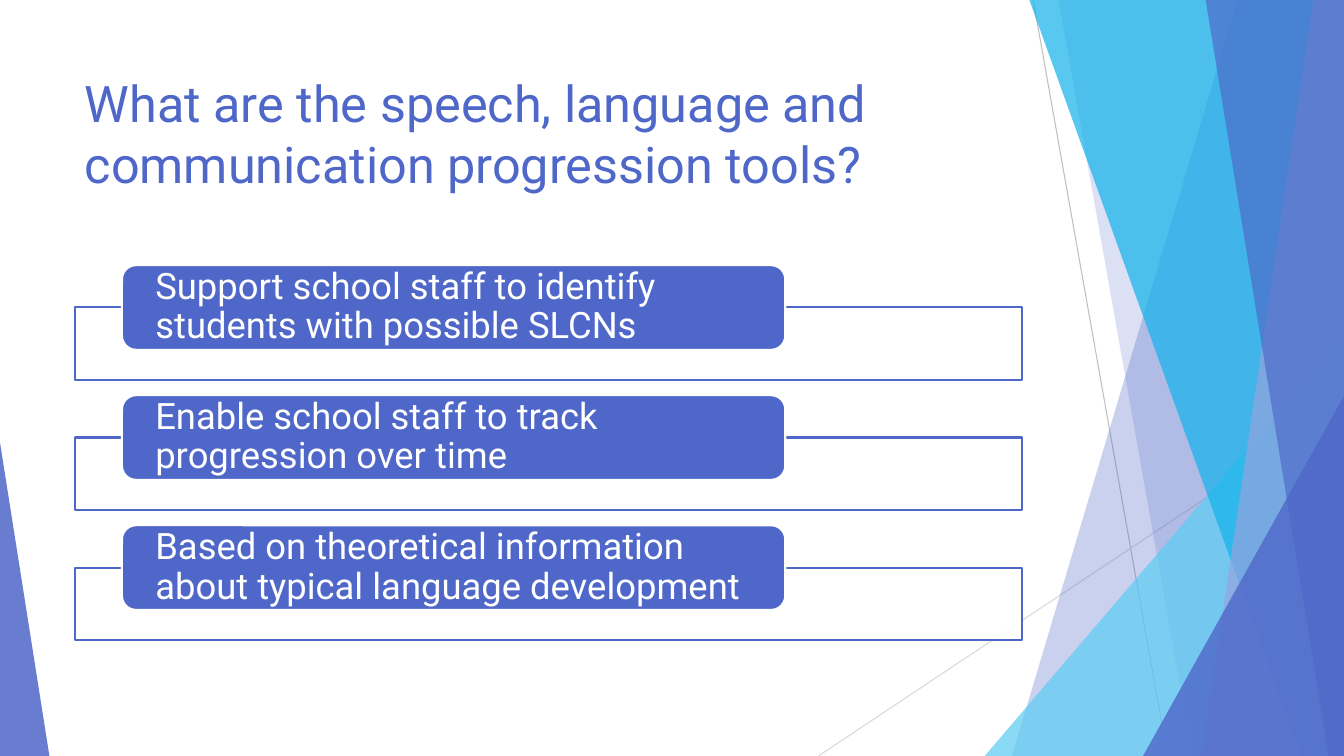
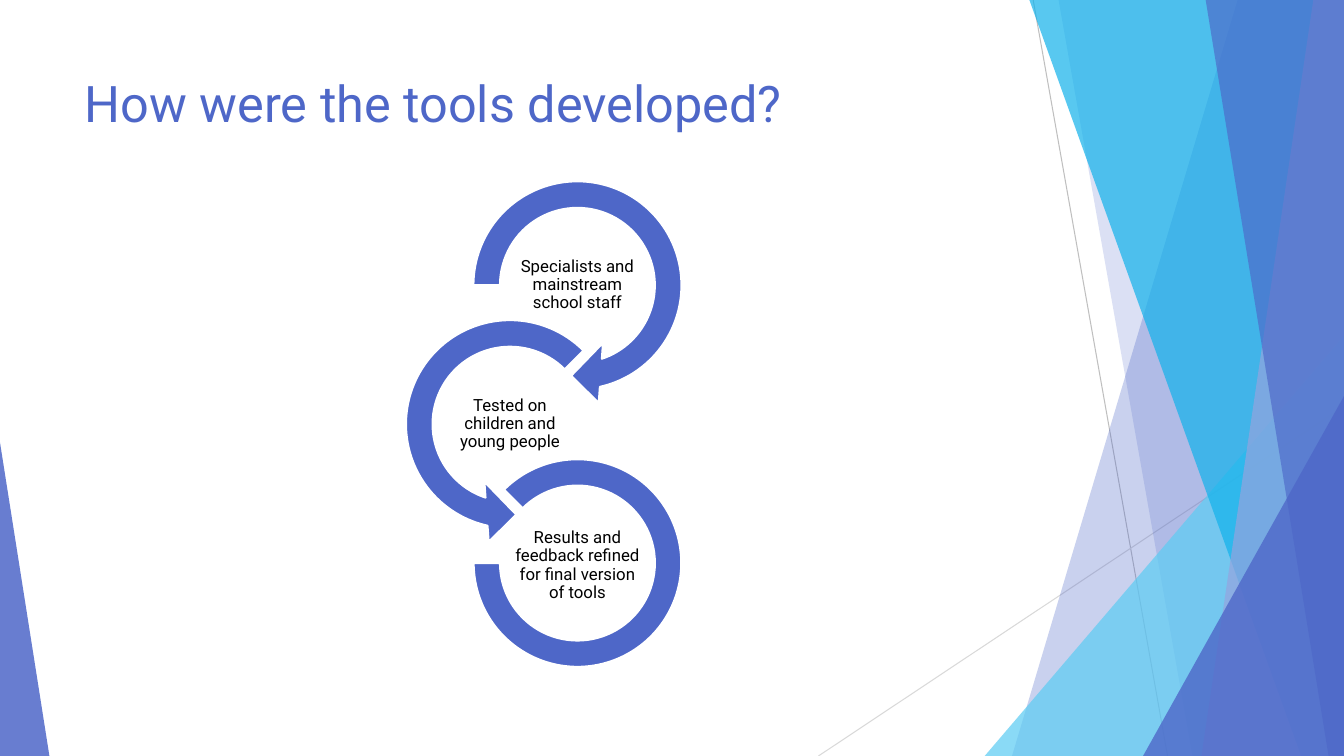
from lxml import etree
from pptx import Presentation
from pptx.dml.color import RGBColor
from pptx.enum.shapes import MSO_CONNECTOR, MSO_SHAPE
from pptx.enum.text import MSO_ANCHOR, MSO_AUTO_SIZE, PP_ALIGN
from pptx.oxml.ns import qn
from pptx.util import Pt

RECTANGLE, ROUNDED = MSO_SHAPE.RECTANGLE, MSO_SHAPE.ROUNDED_RECTANGLE
TRIANGLE, BLOCK_ARC = MSO_SHAPE.ISOSCELES_TRIANGLE, MSO_SHAPE.BLOCK_ARC
RIGHT_TURN, LEFT_TURN = MSO_SHAPE.CIRCULAR_ARROW, MSO_SHAPE.LEFT_CIRCULAR_ARROW
STRAIGHT = MSO_CONNECTOR.STRAIGHT
TOP, MIDDLE = MSO_ANCHOR.TOP, MSO_ANCHOR.MIDDLE
LEFT, CENTER = PP_ALIGN.LEFT, PP_ALIGN.CENTER
NO_AUTOFIT = MSO_AUTO_SIZE.NONE

# Content
TITLES = [
    "What are the speech, language and communication progression tools?",
    "How were the tools developed?",
]
PURPOSES = [
    "Support school staff to identify students with possible SLCNs",
    "Enable school staff to track progression over time",
    "Based on theoretical information about typical language development",
]
# text, shape, diameter, centre x, text shift down, adjustments
STAGES = [
    ("Specialists and mainstream school staff", RIGHT_TURN, 172.8, 412.5, 0,
     (0.11, 11.423, 45, 108, 0.125)),
    ("Tested on children and young people", LEFT_TURN, 172.8, 364.3, 0,
     (0.11, 11.423, 63, 189, 0.125)),
    ("Results and feedback refined for final version of tools", BLOCK_ARC,
     148.3, 412.5, 1.8, (135, 108, 0.127)),
]

# Shared look
WIDTH, HEIGHT = 960, 540
FONT = "Roboto"
COLORS = {
    "blue": "4E67C8", "sky": "5ECCF3", "cyan": "12B2EB", "lavender": "95A4DE",
    "white": "FFFFFF", "black": "000000", "gray": "BFBFBF", "pale": "D9D9D9",
}
TITLE_BOX = (53.3, 48.2, 676.8, 103.7)
TITLE_STYLE = {"size": Pt(36), "color": "blue"}
PURPOSE_STYLE = {"size": Pt(26), "color": "white"}
STAGE_STYLE = {"size": Pt(12), "color": "black"}

# Background: thin lines, then facets from back to front
THIN_LINES = [((738, 0), (834, HEIGHT), "gray"),
              ((WIDTH, 290.2), (584.6, HEIGHT), "pale")]
# band: x at top and bottom; triangle: left, top, width, apex
FACETS = [
    ("band", (884.2, 722.9), "blue", 30),
    ("band", (756, 851.8), "blue", 20),
    ("triangle", (703.4, 239.8, 256.6, 1), "sky", 72),
    ("band", (735.1, 929.5), "cyan", 70),
    ("band", (938.2, 858.2), "lavender", 70),
    ("band", (861.1, 949), "blue", 65),
    ("triangle", (816.5, 283, 143.5, 1), "blue", 80),
    ("triangle", (0, 316.1, 35.3, 0), "blue", 85),
]


def rgb(name):
    return RGBColor.from_string(COLORS[name])


def paint(shape, fill, opacity=100, line=None):
    shape.shadow.inherit = False
    shape.fill.solid()
    shape.fill.fore_color.rgb = rgb(fill)
    if opacity < 100:
        color = shape.element.xpath("./p:spPr/a:solidFill/a:srgbClr")[0]
        etree.SubElement(color, qn("a:alpha"), val=str(opacity * 1000))
    if line:
        shape.line.color.rgb = rgb(line)
        shape.line.width = Pt(1.5)
    else:
        shape.line.fill.background()


def add_shape(page, kind, box, fill, opacity=100, line=None, adjustments=()):
    shape = page.shapes.add_shape(kind, *map(Pt, box))
    for index, value in enumerate(adjustments):
        shape.adjustments[index] = value
    paint(shape, fill, opacity, line)
    return shape


def write(shape, text, style, align=LEFT, anchor=MIDDLE, insets=(0, 0), spacing=0.9):
    frame = shape.text_frame
    side, edge = map(Pt, insets)
    settings = {"word_wrap": True, "auto_size": NO_AUTOFIT, "vertical_anchor": anchor,
                "margin_left": side, "margin_right": side,
                "margin_top": edge, "margin_bottom": edge}
    for name, value in settings.items():
        setattr(frame, name, value)
    para = frame.paragraphs[0]
    para.alignment, para.line_spacing = align, spacing
    span = para.add_run()
    span.text = text
    span.font.name, span.font.size = FONT, style["size"]
    span.font.color.rgb = rgb(style["color"])


def add_band(page, top_x, bottom_x):
    top = Pt(-0.6)
    builder = page.shapes.build_freeform(Pt(top_x), top)
    builder.add_line_segments([(Pt(WIDTH), top), (Pt(WIDTH), Pt(HEIGHT)),
                               (Pt(bottom_x), Pt(HEIGHT))])
    return builder.convert_to_shape()


def decorate(layout, page):
    """Draw the background on a page and move it to the layout."""
    parts = []
    for start, end, color in THIN_LINES:
        line = page.shapes.add_connector(STRAIGHT, *map(Pt, start + end))
        line.line.color.rgb = rgb(color)
        line.line.width = Pt(0.75)
        etree.SubElement(line.element.spPr, qn("a:effectLst"))
        parts.append(line)
    for kind, place, color, opacity in FACETS:
        if kind == "band":
            facet = add_band(page, *place)
            paint(facet, color, opacity)
        else:
            left, top, width, apex = place
            facet = add_shape(page, TRIANGLE, (left, top, width, HEIGHT - top),
                              color, opacity, adjustments=(apex,))
        parts.append(facet)
    for index, part in enumerate(parts):
        part.element.xpath(".//p:cNvPr")[0].set("id", str(100 + index))
        layout.shapes.element.insert(2 + index, part.element)


def add_page(deck, layout, title):
    page = deck.slides.add_slide(layout)
    box = page.shapes.title
    box.left, box.top, box.width, box.height = map(Pt, TITLE_BOX)
    write(box, title, TITLE_STYLE, anchor=TOP, insets=(7.2, 3.6), spacing=1.0)
    return page


def add_purposes(page):
    first_top, step = 219.6, 92.9
    for index, text in enumerate(PURPOSES):
        top = first_top + index * step
        add_shape(page, RECTANGLE, (53.3, top, 676.8, 51.8), "white", 90, "blue")
        label = add_shape(page, ROUNDED, (87.1, top - 30.2, 473.8, 60.5),
                          "blue", line="white")
        write(label, text, PURPOSE_STYLE, insets=(20.9, 0))


def add_stages(page):
    first_middle, step = 203.8, 99.2
    text_width, text_height = 95.8, 48.2
    for index, (text, kind, size, center, shift, adjustments) in enumerate(STAGES):
        middle = first_middle + index * step
        add_shape(page, kind, (center - size / 2, middle - size / 2, size, size),
                  "blue", line="white", adjustments=adjustments)
        box = page.shapes.add_textbox(
            Pt(center - text_width / 2), Pt(middle + shift - text_height / 2),
            Pt(text_width), Pt(text_height))
        write(box, text, STAGE_STYLE, CENTER, insets=(0.7, 0.7))


def main():
    deck = Presentation()
    deck.slide_width, deck.slide_height = Pt(WIDTH), Pt(HEIGHT)
    layout = deck.slide_layouts[5]
    pages = [add_page(deck, layout, title) for title in TITLES]
    decorate(layout, pages[0])
    add_purposes(pages[0])
    add_stages(pages[1])
    deck.save("out.pptx")


if __name__ == "__main__":
    main()
